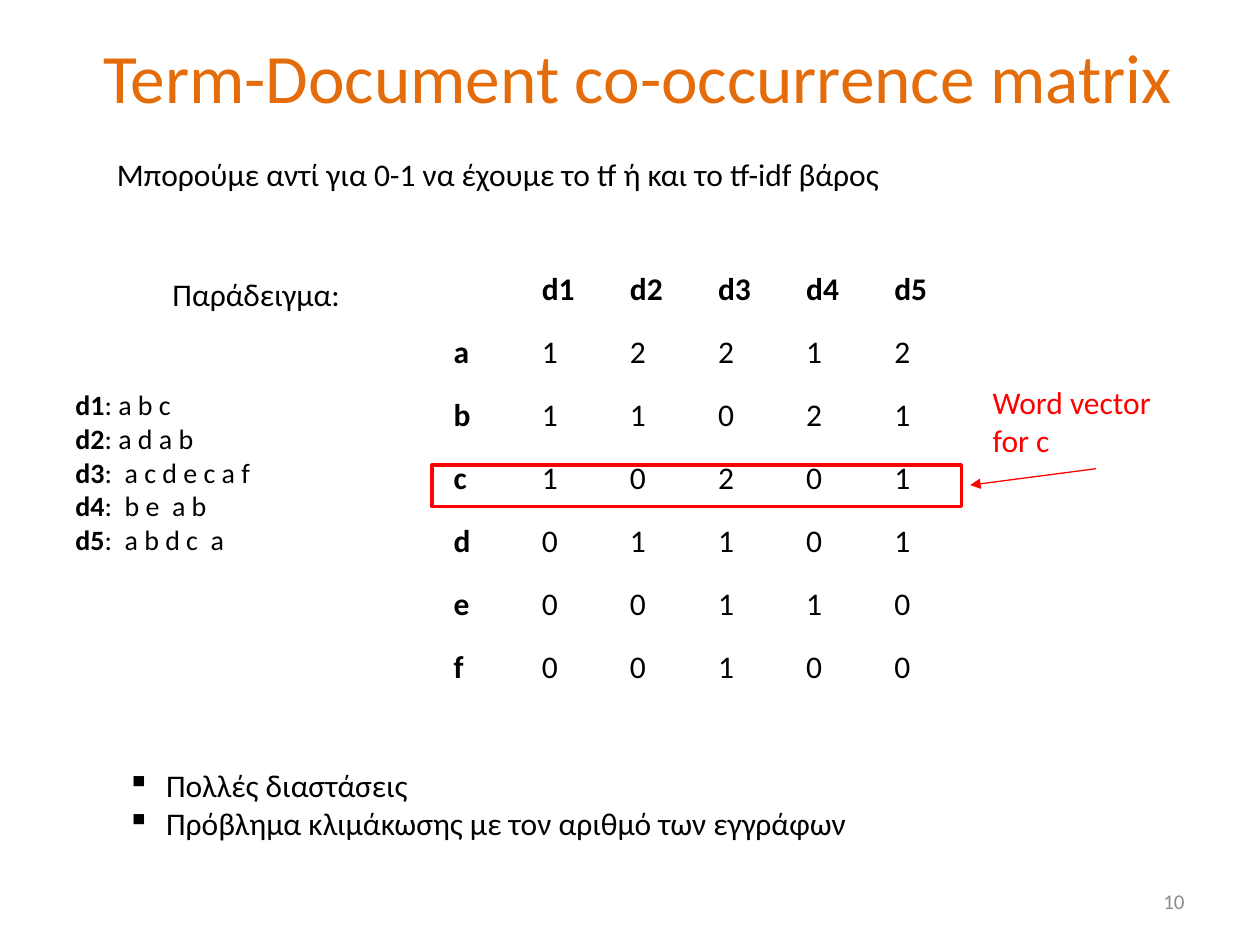
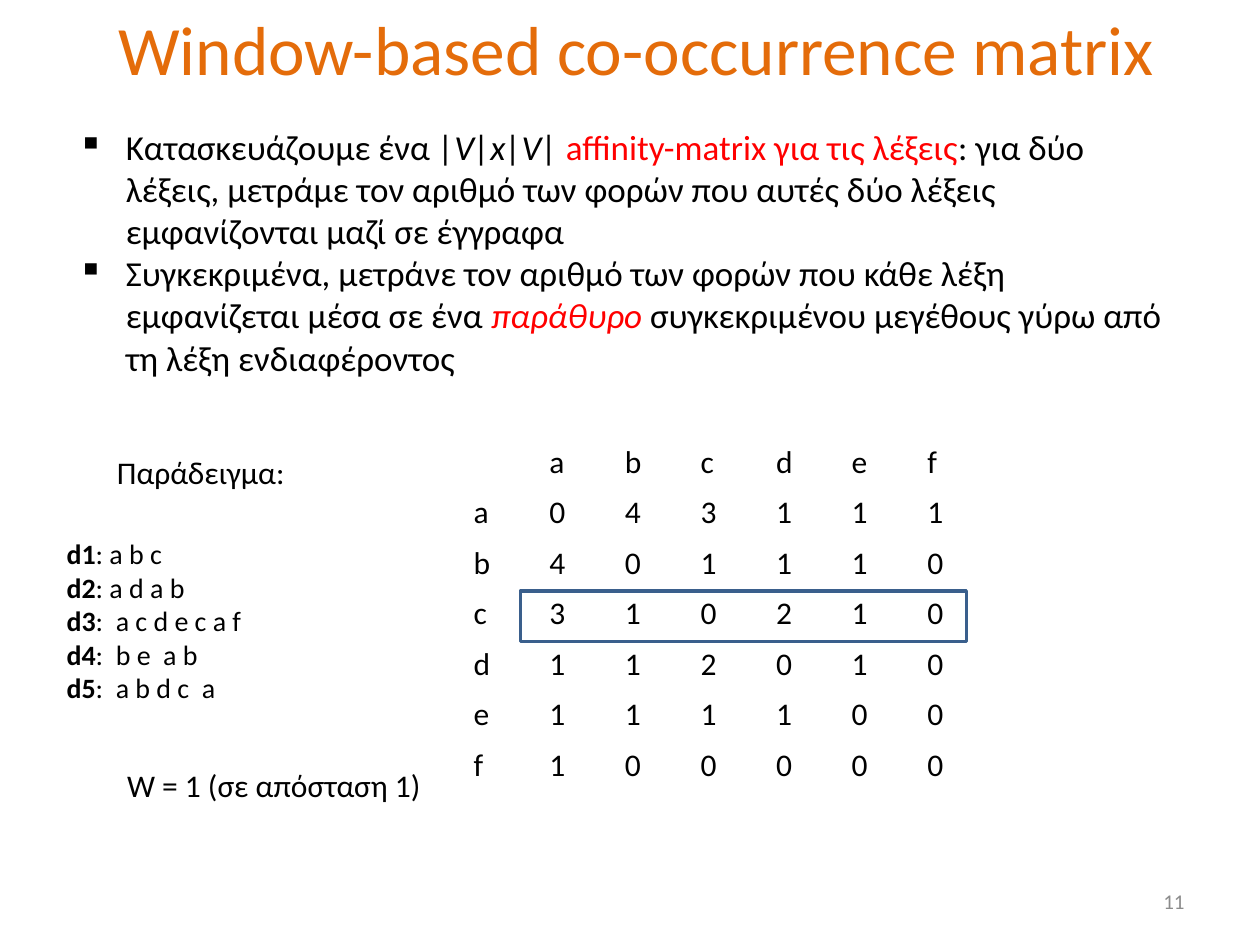
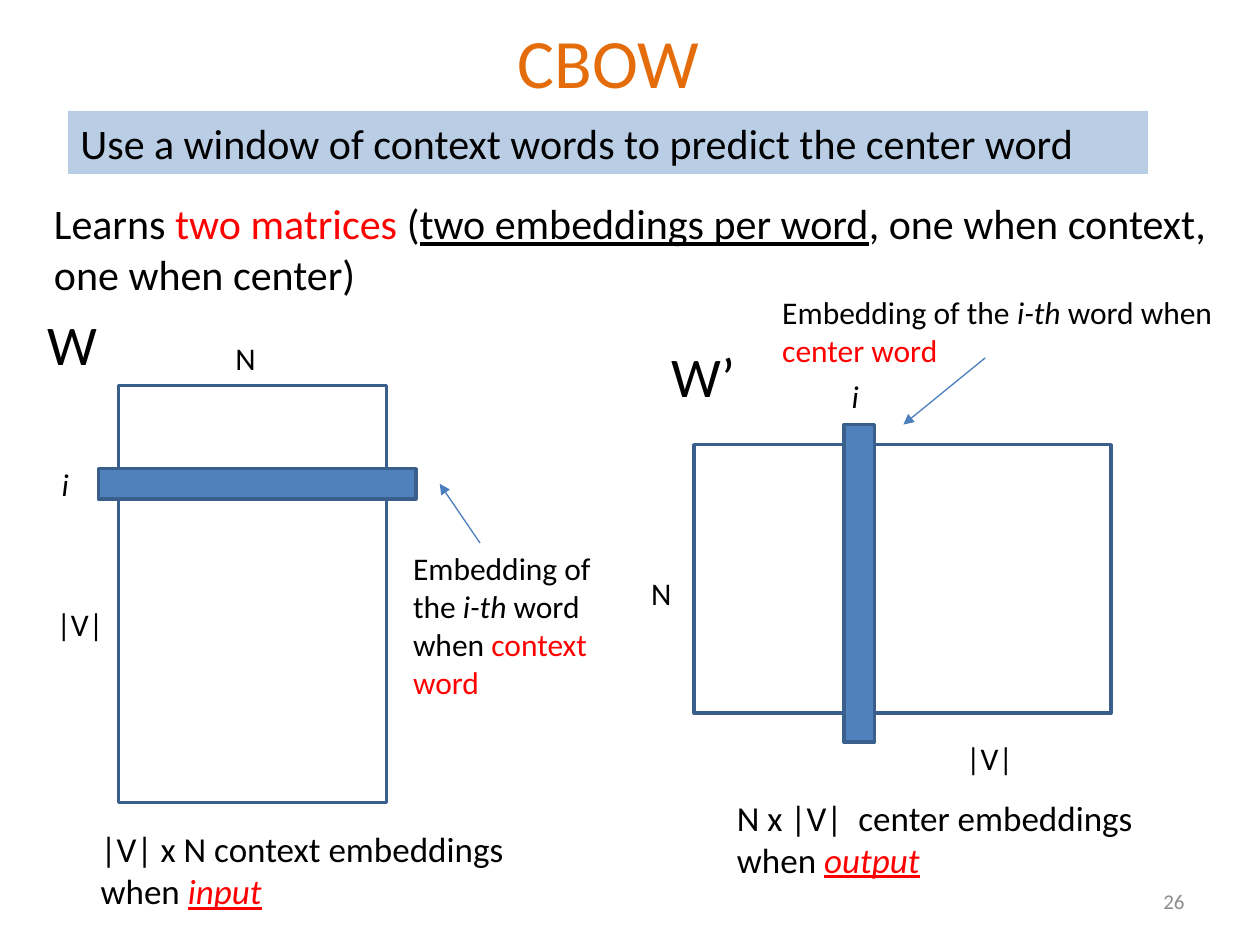
from pptx import Presentation
from pptx.dml.color import RGBColor
from pptx.enum.shapes import MSO_CONNECTOR, MSO_SHAPE
from pptx.enum.text import MSO_ANCHOR as Anchor, PP_ALIGN as Align
from pptx.oxml.ns import qn
from pptx.util import Inches, Pt
from lxml.etree import SubElement

FONT = "Calibri"
BLACK, RED, GREY = "000000", "FF0000", "8C8C8C"
ORANGE, PALE_BLUE = "E46C0A", "B9CDE5"
BLUE, DARK_BLUE, ARROW_BLUE = "4F81BD", "3A5F8C", "4B7EBC"

DOCUMENTS = [
    ("d1", ": a b c"),
    ("d2", ": a d a b"),
    ("d3", ":  a c d e c a f"),
    ("d4", ":  b e  a b"),
    ("d5", ":  a b d c  a"),
]
WORDS = "abcdef"
TERM_DOCUMENT_COUNTS = ["12212", "11021", "10201", "01101", "00110", "00100"]
WINDOW_COUNTS = ["043111", "401110", "310210", "112010", "111100", "100000"]

RED_RUN = {"color": RED}
ITALIC = {"italic": True}
RED_ITALIC = {"color": RED, "italic": True}
RED_LINK = {"color": RED, "italic": True, "underline": True}


def rgb(value):
    """Turn a hex string into a colour."""
    return RGBColor.from_string(value)


def inches(*lengths):
    """Turn numbers into lengths in inches."""
    return [Inches(length) for length in lengths]


def set_bullet(paragraph, indent):
    """Give a paragraph a square bullet with a hanging indent."""
    properties = paragraph._p.get_or_add_pPr()
    properties.set("marL", str(Inches(indent)))
    properties.set("indent", str(-Inches(indent)))
    SubElement(properties, qn("a:buChar")).set("char", "▪")


def write_text(frame, paragraphs, size=18, color=BLACK, bold=False,
               align=Align.LEFT, anchor=Anchor.TOP, bullet_indent=None):
    """Fill a frame with paragraphs, each a string or a list of runs."""
    frame.word_wrap = True
    frame.vertical_anchor = anchor
    if isinstance(paragraphs, str):
        paragraphs = [paragraphs]
    for index, runs in enumerate(paragraphs):
        paragraph = frame.add_paragraph() if index else frame.paragraphs[0]
        paragraph.alignment = align
        if bullet_indent:
            set_bullet(paragraph, bullet_indent)
        for part in [runs] if isinstance(runs, str) else runs:
            words, style = (part, {}) if isinstance(part, str) else part
            run = paragraph.add_run()
            run.text = words
            font = run.font
            font.name, font.size = FONT, Pt(size)
            font.bold = style.get("bold", bold)
            font.italic = style.get("italic", False)
            font.underline = style.get("underline", False)
            font.color.rgb = rgb(style.get("color", color))


def add_text(slide, box, paragraphs, **text_format):
    """Place a text box."""
    label = slide.shapes.add_textbox(*inches(*box))
    write_text(label.text_frame, paragraphs, **text_format)


def add_rectangle(slide, box, fill=None, line=None):
    """Place a rectangle with an optional fill and outline."""
    rectangle = slide.shapes.add_shape(MSO_SHAPE.RECTANGLE, *inches(*box))
    rectangle.shadow.inherit = False
    if fill:
        rectangle.fill.solid()
        rectangle.fill.fore_color.rgb = rgb(fill)
    else:
        rectangle.fill.background()
    if line:
        rectangle.line.color.rgb = rgb(line)
        rectangle.line.width = Pt(2)
    else:
        rectangle.line.fill.background()
    return rectangle


def add_arrow(slide, start, end, color):
    """Draw a thin arrow between two points."""
    arrow = slide.shapes.add_connector(MSO_CONNECTOR.STRAIGHT, *inches(*start, *end))
    arrow.line.color.rgb = rgb(color)
    arrow.line.width = Pt(0.75)
    SubElement(arrow.line._get_or_add_ln(), qn("a:tailEnd")).set("type", "triangle")
    SubElement(arrow._element.spPr, qn("a:effectLst"))


def start_slide(deck, title, number, left, top):
    """Add a blank slide with its title and page number."""
    slide = deck.slides.add_slide(deck.slide_layouts[6])
    add_text(slide, (left, top, 9, 0.61), title, size=39.6, color=ORANGE,
             align=Align.CENTER, anchor=Anchor.MIDDLE)
    add_text(slide, (7.17, 6.95, 2.33, 0.4), str(number), size=12, color=GREY,
             align=Align.RIGHT, anchor=Anchor.MIDDLE)
    return slide


def add_example(slide, left, top, label_left, label_top):
    """List the example documents under their label."""
    add_text(slide, (left + label_left, top + label_top, 2.05, 0.4), "Παράδειγμα:")
    add_text(slide, (left, top, 3.08, 1.45),
             [[(name, {"bold": True}), words] for name, words in DOCUMENTS], size=16)


def add_count_table(slide, left, top, heads, counts, column, row, bold_heads=False):
    """Place a plain table of counts with one row per word."""
    grid = [["", *heads]] + [[word, *line] for word, line in zip(WORDS, counts)]
    rows, columns = len(grid), len(grid[0])
    table = slide.shapes.add_table(
        rows, columns, *inches(left, top, column * columns, row * rows)).table
    table.first_row = table.horz_banding = False
    for r, values in enumerate(grid):
        for c, value in enumerate(values):
            cell = table.cell(r, c)
            cell.fill.background()
            if value:
                write_text(cell.text_frame, value,
                           bold=bold_heads and (r == 0 or c == 0))


def add_matrix(slide, matrix, embedding):
    """Draw a matrix outline with one embedding bar across it."""
    add_rectangle(slide, matrix, line=DARK_BLUE)
    add_rectangle(slide, embedding, fill=BLUE, line=DARK_BLUE)


def add_context_matrix(slide, left, top):
    """Draw the context matrix W, whose rows are embeddings."""
    long_side, short_side = 3.31, 2.13
    add_matrix(slide, (left, top, short_side, long_side),
               (left - 0.16, top + 0.66, 2.52, 0.24))
    add_text(slide, (left - 0.66, top - 0.65, 0.94, 0.64), "W", size=32)
    add_text(slide, (left + 0.83, top - 0.42, 0.3, 0.4), "N")
    add_text(slide, (left - 0.59, top + 1.69, 0.79, 0.4), "|V|")
    add_text(slide, (left - 0.55, top + 0.58, 0.31, 0.4), [[("i", ITALIC)]])
    add_text(slide, (left + 2.24, top + 1.25, 1.9, 1.31),
             [["Embedding of the ", ("i-th", ITALIC), " word when ",
               ("context word", RED_RUN)]])
    add_arrow(slide, (left + 2.87, top + 1.25), (left + 2.55, top + 0.78), ARROW_BLUE)
    add_text(slide, (left - 0.24, top + 3.46, 4.22, 0.77),
             ["|V| x N context embeddings", ["when ", ("input", RED_LINK)]], size=20)


def add_center_matrix(slide, left, top):
    """Draw the center matrix W’, whose columns are embeddings."""
    long_side, short_side = 3.31, 2.13
    add_matrix(slide, (left, top, long_side, short_side),
               (left + 1.19, top - 0.16, 0.24, 2.52))
    add_text(slide, (left - 0.28, top - 0.87, 0.94, 0.64), "W’", size=32)
    add_text(slide, (left - 0.44, top + 0.98, 0.3, 0.4), "N")
    add_text(slide, (left + 2.06, top + 2.29, 0.79, 0.4), "|V|")
    add_text(slide, (left + 1.15, top - 0.59, 0.31, 0.4), [[("i", ITALIC)]])
    add_text(slide, (left + 0.6, top - 1.25, 3.75, 0.71),
             [["Embedding of the ", ("i-th", ITALIC), " word when ",
               ("center word", RED_RUN)]])
    add_arrow(slide, (left + 2.31, top - 0.69), (left + 1.66, top - 0.16), ARROW_BLUE)
    add_text(slide, (left + 0.24, top + 2.74, 3.82, 0.77),
             ["N x |V|  center embeddings", ["when ", ("output", RED_LINK)]], size=20)


def build_term_document(deck):
    """Build the slide on counts of words in documents."""
    slide = start_slide(deck, " Term-Document co-occurrence matrix", 10, 0.5, 0.3)
    add_count_table(slide, 3.5, 2.1, [name for name, _ in DOCUMENTS],
                    TERM_DOCUMENT_COUNTS, 0.7, 0.5, bold_heads=True)
    add_rectangle(slide, (3.43, 3.69, 4.2, 0.33), line=RED)
    add_text(slide, (0.83, 1.18, 8.19, 0.71),
             "Μπορούμε αντί για 0-1 να έχουμε το tf ή και το tf-idf βάρος")
    add_text(slide, (7.78, 2.99, 1.73, 0.71), "Word vector for c", color=RED)
    add_arrow(slide, (8.7, 3.72), (7.7, 3.85), RED)
    add_text(slide, (0.91, 6.03, 8.35, 0.71),
             ["Πολλές διαστάσεις", "Πρόβλημα κλιμάκωσης με τον αριθμό των εγγράφων"],
             bullet_indent=0.31)
    add_example(slide, 0.5, 3.03, 0.77, -0.9)


def build_window_based(deck):
    """Build the slide on counts of words within a window."""
    slide = start_slide(deck, " Window-based co-occurrence matrix", 11, 0.49, 0.07)
    affinity = ["Κατασκευάζουμε ένα ", ("|V|x|V| ", ITALIC),
                ("affinity-matrix για τις λέξεις", RED_RUN),
                ": για δύο λέξεις, μετράμε τον αριθμό των φορών που αυτές δύο "
                "λέξεις εμφανίζονται μαζί σε έγγραφα"]
    window = ["Συγκεκριμένα, μετράνε τον αριθμό των φορών που κάθε λέξη "
              "εμφανίζεται μέσα σε ένα ", ("παράθυρο", RED_ITALIC),
              " συγκεκριμένου μεγέθους γύρω από τη λέξη ενδιαφέροντος"]
    add_text(slide, (0.52, 0.95, 8.98, 2.12), [affinity, window], size=20,
             bullet_indent=0.38)
    add_text(slide, (0.91, 6.03, 8.35, 0.4), "W = 1 (σε απόσταση 1)")
    add_count_table(slide, 3.66, 3.47, WORDS, WINDOW_COUNTS, 0.6, 0.4)
    add_example(slide, 0.43, 4.21, 0.4, -0.66)
    add_rectangle(slide, (4.13, 4.69, 3.54, 0.4), line=DARK_BLUE)


def build_cbow(deck):
    """Build the slide on the two embedding matrices."""
    slide = start_slide(deck, "CBOW", 26, 0.33, 0.18)
    banner = add_rectangle(slide, (0.54, 0.88, 8.57, 0.5), fill=PALE_BLUE)
    write_text(banner.text_frame,
               "Use a window of context words to predict the center word", size=24)
    add_text(slide, (0.33, 1.52, 9.4, 0.91),
             [["Learns ", ("two matrices ", RED_RUN), "(",
               ("two embeddings per word", {"underline": True}),
               ", one when context, one when center)"]], size=24)
    add_center_matrix(slide, 5.51, 3.53)
    add_context_matrix(slide, 0.94, 3.06)


def main():
    """Build and save the deck."""
    deck = Presentation()
    deck.slide_width, deck.slide_height = inches(10, 7.5)
    build_term_document(deck)
    build_window_based(deck)
    build_cbow(deck)
    deck.save("out.pptx")


if __name__ == "__main__":
    main()
